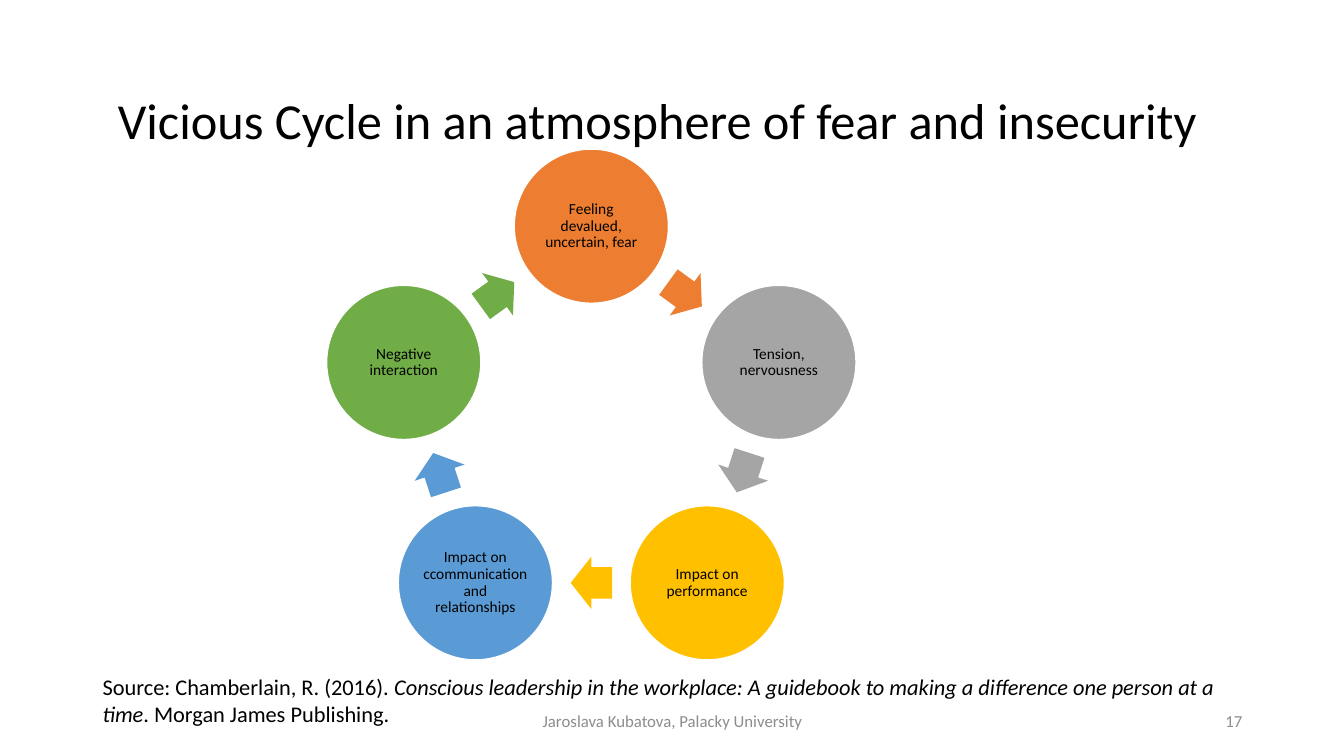
"""Build the slide showing the vicious cycle of fear and insecurity."""
import dataclasses
import math

import pptx
import pptx.dml.color
import pptx.enum.shapes
import pptx.enum.text
import pptx.util

SHAPES = pptx.enum.shapes.MSO_SHAPE
ALIGN = pptx.enum.text.PP_ALIGN
ANCHOR = pptx.enum.text.MSO_ANCHOR
WIDTH = pptx.util.Inches(13.33)
HEIGHT = pptx.util.Inches(7.5)


@dataclasses.dataclass(frozen=True)
class Theme:
    """Colours and type sizes of the slide."""
    font: str = "Calibri"
    ink: str = "000000"
    muted: str = "8C8C8C"
    paper: str = "FFFFFF"
    title_size: int = 36
    source_size: int = 16
    footer_size: int = 12
    node_size: int = 11
    outline: int = 1


THEME = Theme()
STAGES = [
    ("Feeling devalued, uncertain, fear", "ED7D31"),
    ("Tension, nervousness", "A5A5A5"),
    ("Impact on performance", "FFC000"),
    ("Impact on ccommunication and relationships", "5B9BD5"),
    ("Negative interaction", "70AD47"),
]
SOURCE = [
    ("Source: Chamberlain, R. (2016). ", False),
    ("Conscious leadership in the workplace: "
     "A guidebook to making a difference one person at a time", True),
    (". Morgan James Publishing.", False),
]


def across(percent):
    """Return a percentage of the slide width."""
    return round(WIDTH * percent / 100)


def down(percent):
    """Return a percentage of the slide height."""
    return round(HEIGHT * percent / 100)


def rgb(value):
    """Return a colour from its hexadecimal form."""
    return pptx.dml.color.RGBColor.from_string(value)


def write(shape, runs, size, color=THEME.ink, align=ALIGN.LEFT,
          anchor=ANCHOR.MIDDLE, spacing=1.0):
    """Fill a shape with one paragraph of (text, italic) runs."""
    frame = shape.text_frame
    frame.word_wrap = True
    frame.vertical_anchor = anchor
    paragraph = frame.paragraphs[0]
    paragraph.alignment = align
    paragraph.line_spacing = spacing
    font = paragraph.font
    font.name = THEME.font
    font.size = pptx.util.Pt(size)
    font.color.rgb = rgb(color)
    for text, italic in runs:
        run = paragraph.add_run()
        run.text = text
        if italic:
            run.font.italic = True


def add_text(slide, box, runs, size, **style):
    """Add a text box placed in percentages of the slide."""
    left, top, width, height = box
    shape = slide.shapes.add_textbox(
        across(left), down(top), across(width), down(height))
    write(shape, runs, size, **style)


def add_centred(slide, kind, centre, width, height, color):
    """Add a flat filled shape around a centre point."""
    x, y = centre
    shape = slide.shapes.add_shape(
        kind, round(x - width / 2), round(y - height / 2), width, height)
    shape.shadow.inherit = False
    shape.fill.solid()
    shape.fill.fore_color.rgb = rgb(color)
    shape.line.fill.background()
    return shape


def add_node(slide, centre, label, color):
    """Add one labelled circle of the cycle."""
    node = add_centred(
        slide, SHAPES.OVAL, centre, down(20.4), down(20.4), color)
    node.line.color.rgb = rgb(THEME.paper)
    node.line.width = pptx.util.Pt(THEME.outline)
    frame = node.text_frame
    frame.margin_left = frame.margin_right = pptx.util.Inches(0.02)
    frame.margin_top = frame.margin_bottom = pptx.util.Inches(0.02)
    write(node, [(label, False)], THEME.node_size,
          align=ALIGN.CENTER, spacing=0.9)


def add_arrow(slide, centre, angle, color):
    """Add one block arrow turned along the cycle."""
    arrow = add_centred(
        slide, SHAPES.RIGHT_ARROW, centre, down(5.47), down(6.93), color)
    arrow.adjustments[0] = 0.6
    arrow.adjustments[1] = 0.5
    arrow.rotation = angle


def add_cycle(slide, stages, centre, radius):
    """Place the stages clockwise from the top with arrows between them."""
    step = 360 / len(stages)

    def point(angle, reach):
        """Return a point on a ring, measured clockwise from the top."""
        turn = math.radians(angle)
        return (centre[0] + reach * math.sin(turn),
                centre[1] - reach * math.cos(turn))

    arrow_radius = radius * math.cos(math.radians(step / 2))
    for index, (label, color) in enumerate(stages):
        angle = index * step
        add_node(slide, point(angle, radius), label, color)
        middle = angle + step / 2
        add_arrow(slide, point(middle, arrow_radius), middle, color)


def main():
    """Build and save the presentation."""
    presentation = pptx.Presentation()
    presentation.slide_width = WIDTH
    presentation.slide_height = HEIGHT
    slide = presentation.slides.add_slide(presentation.slide_layouts[6])
    add_text(slide, (8.03, 6.67, 86.27, 19.33),
             [("Vicious Cycle in an atmosphere of fear and insecurity", False)],
             THEME.title_size, spacing=0.9)
    add_text(slide, (33.16, 92.67, 33.76, 5.33),
             [("Jaroslava Kubatova, Palacky University", False)],
             THEME.footer_size, color=THEME.muted, align=ALIGN.CENTER)
    add_text(slide, (70.67, 92.67, 22.5, 5.33), [("17", False)],
             THEME.footer_size, color=THEME.muted, align=ALIGN.RIGHT)
    add_cycle(slide, STAGES, (across(44), down(56)), down(26.08))
    add_text(slide, (6.9, 88.4, 85.9, 8.53), SOURCE,
             THEME.source_size, anchor=ANCHOR.TOP)
    presentation.save("out.pptx")


if __name__ == "__main__":
    main()
